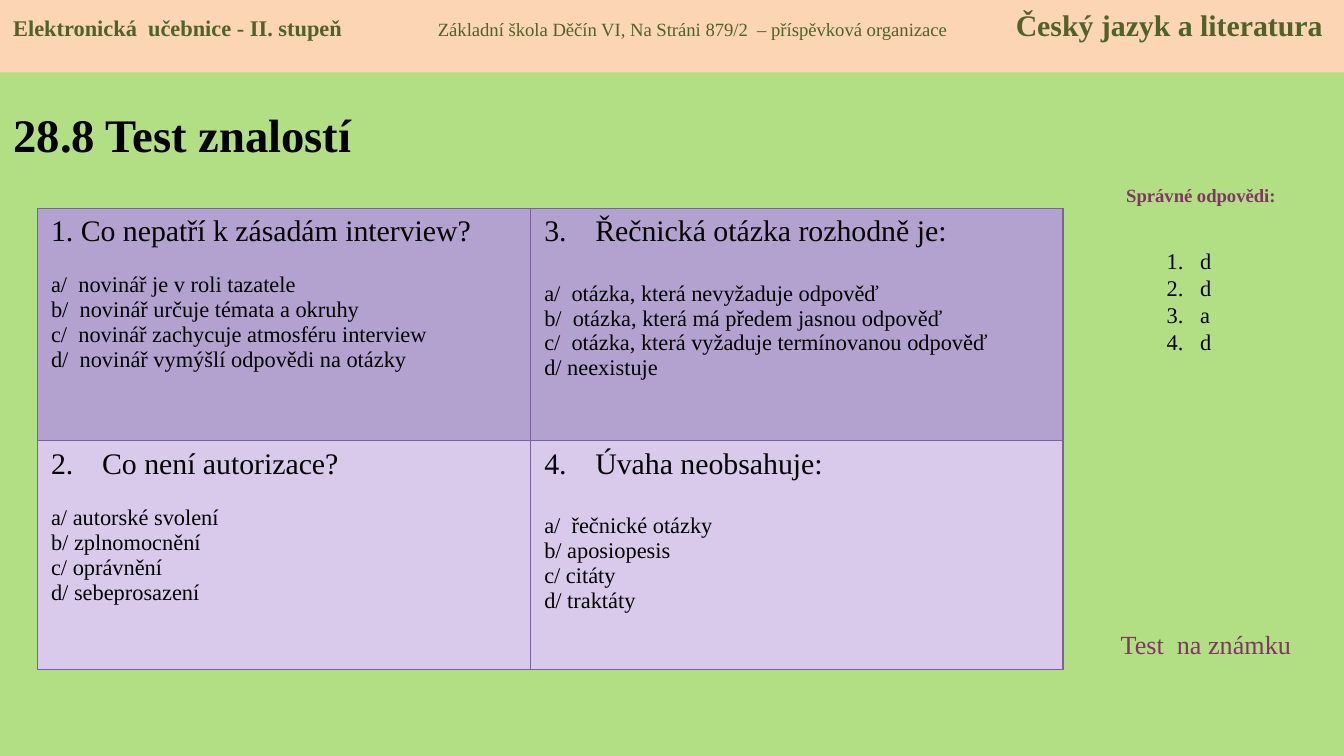
from lxml.etree import SubElement
from pptx import Presentation
from pptx.dml.color import RGBColor
from pptx.enum.shapes import MSO_SHAPE
from pptx.enum.text import MSO_ANCHOR, MSO_AUTO_SIZE, PP_ALIGN
from pptx.oxml import parse_xml
from pptx.oxml.ns import nsdecls, qn
from pptx.util import Inches, Pt


def color(code):
    return RGBColor.from_string(code)


def style(para, size, code="000000", bold=False):
    para.alignment = PP_ALIGN.LEFT
    for run in para.runs:
        font = run.font
        font.name = "Times New Roman"
        font.size, font.bold = Pt(size), bold
        font.color.rgb = color(code)


deck = Presentation()
deck.slide_width = Inches(10)
deck.slide_height = Inches(10) * 9 // 16
slide = deck.slides.add_slide(deck.slide_layouts[1])
slide.background.fill.solid()
slide.background.fill.fore_color.rgb = color("B2DE84")

# Title
title = slide.shapes.title
title.left, title.top = Inches(0), Inches(0.67)
title.width, title.height = Inches(3.19), Inches(0.65)
frame = title.text_frame
frame.text = "28.8 Test znalostí"
frame.auto_size = MSO_AUTO_SIZE.NONE
frame.vertical_anchor = MSO_ANCHOR.MIDDLE
style(frame.paragraphs[0], 25, bold=True)

# Header band: three parts set apart by tab stops
band = slide.shapes.add_shape(
    MSO_SHAPE.RECTANGLE, Inches(0), Inches(0), Inches(10), Inches(0.54))
band.shadow.inherit = False
band.fill.solid()
band.fill.fore_color.rgb = color("FCD5B5")
band.line.fill.background()
band.text_frame.vertical_anchor = MSO_ANCHOR.TOP
para = band.text_frame.paragraphs[0]
parts = [
    ("Elektronická  učebnice - II. stupeň\t", 12, True),
    ("Základní škola Děčín VI, Na Stráni 879/2  – příspěvková organizace\t", 10, False),
    ("Český jazyk a literatura", 16, True),
]
for text, size, bold in parts:
    para.add_run().text = text
style(para, 12, "4F6228")
for run, (text, size, bold) in zip(para.runs, parts):
    run.font.size, run.font.bold = Pt(size), bold
tabs = SubElement(para._p.get_or_add_pPr(), qn("a:tabLst"))
for stop in (3.16, 7.46):
    SubElement(tabs, qn("a:tab"), pos=str(Inches(stop)), algn="l")

# Questions: row, column, number, gap below in points, heading, answers
quiz = [
    (0, 0, None, 13.3, "1. Co nepatří k zásadám interview?", [
        "a/  novinář je v roli tazatele",
        "b/  novinář určuje témata a okruhy",
        "c/  novinář zachycuje atmosféru interview",
        "d/  novinář vymýšlí odpovědi na otázky"]),
    (0, 1, 3, 17.7, "Řečnická otázka rozhodně je:", [
        "a/  otázka, která nevyžaduje odpověď",
        "b/  otázka, která má předem jasnou odpověď",
        "c/  otázka, která vyžaduje termínovanou odpověď",
        "d/ neexistuje"]),
    (1, 0, 2, 13.3, "Co není autorizace?", [
        "a/ autorské svolení", "b/ zplnomocnění",
        "c/ oprávnění", "d/ sebeprosazení"]),
    (1, 1, 4, 17.7, "Úvaha neobsahuje:", [
        "a/  řečnické otázky", "b/ aposiopesis", "c/ citáty", "d/ traktáty"]),
]
table = slide.shapes.add_table(
    2, 2, Inches(0.28), Inches(1.55), Inches(7.63), Inches(3.43)).table
table.first_row = table.horz_banding = False
table.columns[0].width, table.columns[1].width = Inches(3.67), Inches(3.96)
table.rows[0].height, table.rows[1].height = Inches(1.73), Inches(1.7)
for row, col, num, gap, head, answers in quiz:
    cell = table.cell(row, col)
    cell.fill.solid()
    cell.fill.fore_color.rgb = color(("B3A1CF", "D9CAEC")[row])
    cell.text_frame.text = "\n".join([head] + answers)
    for para in cell.text_frame.paragraphs:
        style(para, 12)
    para = cell.text_frame.paragraphs[0]
    style(para, 16)
    para.space_after = Pt(gap)
    if num:
        props = para._p.get_or_add_pPr()
        props.set("marL", str(Inches(0.38)))
        props.set("indent", str(Inches(-0.38)))
        SubElement(props, qn("a:buAutoNum"), type="arabicPeriod", startAt=str(num))
    for place, side in enumerate("LRTB"):
        cell._tc.get_or_add_tcPr().insert(place, parse_xml(
            f'<a:ln{side} {nsdecls("a")} w="{Pt(0.75)}"><a:solidFill>'
            f'<a:srgbClr val="7D60A0"/></a:solidFill></a:ln{side}>'))

# Numbered key
key = slide.placeholders[1]
key.left, key.top = Inches(8.58), Inches(1.79)
key.width, key.height = Inches(0.8), Inches(1.1)
key.text_frame.text = "d\nd\na\nd"
key.text_frame.auto_size = MSO_AUTO_SIZE.NONE
for para in key.text_frame.paragraphs:
    style(para, 12)
    para.space_before = Pt(0)
    props = para._p.get_or_add_pPr()
    props.set("marL", str(Inches(0.25)))
    props.set("indent", str(Inches(-0.25)))
    SubElement(props, qn("a:buAutoNum"), type="arabicPeriod")

# Side notes
for text, left, top, high, size, bold, align in [
    ("Správné odpovědi:", 8.15, 1.32, 0.27, 10, True, PP_ALIGN.CENTER),
    ("Test  na známku", 8.24, 4.63, 0.34, 14, False, PP_ALIGN.LEFT),
]:
    note = slide.shapes.add_textbox(
        Inches(left), Inches(top), Inches(1.57), Inches(high))
    note.text_frame.word_wrap = True
    note.text_frame.text = text
    para = note.text_frame.paragraphs[0]
    style(para, size, "813763", bold)
    para.alignment = align

deck.save("out.pptx")
